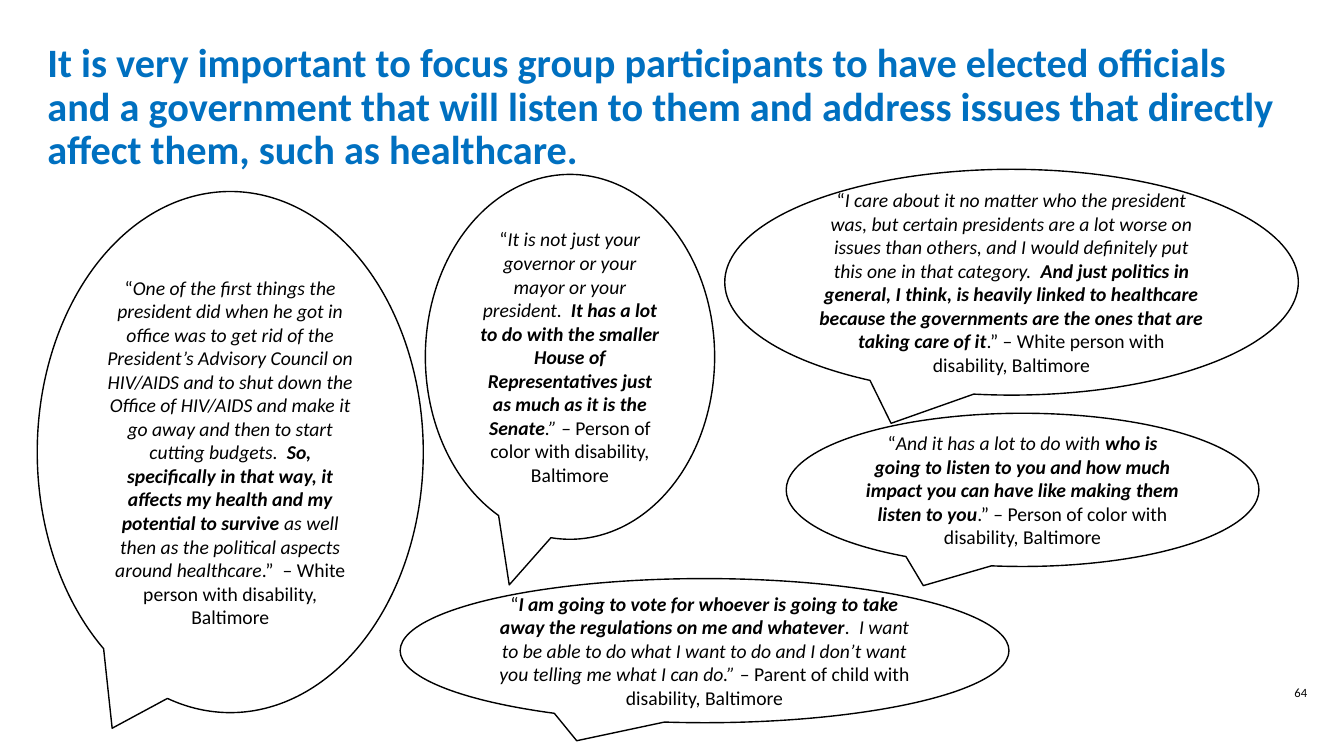
from dataclasses import dataclass
from enum import Enum

from pptx import Presentation
from pptx.dml.color import RGBColor
from pptx.enum.shapes import MSO_SHAPE
from pptx.enum.text import MSO_ANCHOR, MSO_AUTO_SIZE, PP_ALIGN
from pptx.slide import Slide
from pptx.text.text import Font
from pptx.util import Pt


@dataclass(frozen=True)
class Theme:
    font: str = "Calibri"
    title_color: RGBColor = RGBColor(0x00, 0x70, 0xC0)
    ink: RGBColor = RGBColor(0x00, 0x00, 0x00)
    title_size: float = 28.8
    quote_size: float = 14
    number_size: float = 9
    outline: float = 1


class Tone(Enum):
    """Bold and italic flags of a stretch of text."""
    PLAIN = (False, False)
    SPOKEN = (False, True)
    STRESSED = (True, True)


@dataclass(frozen=True)
class Box:
    left: float
    top: float
    width: float
    height: float

    def lengths(self) -> tuple[Pt, Pt, Pt, Pt]:
        return Pt(self.left), Pt(self.top), Pt(self.width), Pt(self.height)


@dataclass(frozen=True)
class Quote:
    box: Box
    phrases: tuple[tuple[str, Tone], ...]
    tail: tuple[float, float] = (-0.21, 0.625)


THEME = Theme()
TITLE = (
    "It is very important to focus group participants to have elected officials "
    "and a government that will listen to them and address issues that directly "
    "affect them, such as healthcare."
)
TITLE_BOX = Box(26.64, 25.2, 907.2, 104.4)
NUMBER_BOX = Box(902.16, 486, 54, 23.76)

# Each quote opens with a plain quotation mark, added when drawn
QUOTES = (
    Quote(Box(285.84, 413.28, 434.88, 102.96), (
        ("I am going to vote for whoever is going to take away the regulations "
         "on me and whatever", Tone.STRESSED),
        (".  I want to be able to do what I want to do and I don’t want you "
         "telling me what I can do.” ", Tone.SPOKEN),
        ("– Parent of child with disability, Baltimore", Tone.PLAIN),
    )),
    Quote(Box(561.6, 295.2, 337.68, 109.44), (
        ("And it has a lot to do with ", Tone.SPOKEN),
        ("who is going to listen to you and how much impact you can have like "
         "making them listen to you", Tone.STRESSED),
        (".” – Person of color with disability, Baltimore", Tone.PLAIN),
    )),
    Quote(Box(517.68, 120.96, 409.68, 161.28), (
        ("I care about it no matter who the president was, but certain "
         "presidents are a lot worse on issues than others, and I would "
         "definitely put this one in that category.  ", Tone.SPOKEN),
        ("And just politics in general, I think, is heavily linked to "
         "healthcare because the governments are the ones that are taking "
         "care of it", Tone.STRESSED),
        (".” – White person with disability, Baltimore", Tone.PLAIN),
    )),
    Quote(Box(303.84, 124.56, 206.64, 260.64), (
        ("It is not just your governor or your mayor or your president.  ",
         Tone.SPOKEN),
        ("It has a lot to do with the smaller House of Representatives just "
         "as much as it is the Senate", Tone.STRESSED),
        (".” ", Tone.SPOKEN),
        ("– Person of color with disability, Baltimore", Tone.PLAIN),
    )),
    Quote(Box(26.64, 136.8, 275.76, 372.24), (
        ("One of the first things the president did when he got in office was "
         "to get rid of the President’s Advisory Council on HIV/AIDS and to "
         "shut down the Office of HIV/AIDS and make it go away and then to "
         "start cutting budgets.  ", Tone.SPOKEN),
        ("So, specifically in that way, it affects my health and my potential "
         "to survive ", Tone.STRESSED),
        ("as well then as the political aspects around healthcare", Tone.SPOKEN),
        (".”  – White person with disability, Baltimore", Tone.PLAIN),
    ), tail=(-0.306, 0.53)),
)


def set_font(font: Font, size: float, color: RGBColor) -> None:
    font.name = THEME.font
    font.size = Pt(size)
    font.color.rgb = color


def draw_title(slide: Slide) -> None:
    title = slide.shapes.title
    title.left, title.top, title.width, title.height = TITLE_BOX.lengths()
    frame = title.text_frame
    frame.text = TITLE
    frame.word_wrap = True
    frame.auto_size = MSO_AUTO_SIZE.NONE
    frame.vertical_anchor = MSO_ANCHOR.MIDDLE
    paragraph = frame.paragraphs[0]
    paragraph.alignment = PP_ALIGN.LEFT
    paragraph.line_spacing = 0.9
    set_font(paragraph.font, THEME.title_size, THEME.title_color)
    paragraph.font.bold = True


def draw_quote(slide: Slide, quote: Quote) -> None:
    bubble = slide.shapes.add_shape(MSO_SHAPE.OVAL_CALLOUT, *quote.box.lengths())
    bubble.adjustments[0], bubble.adjustments[1] = quote.tail
    bubble.shadow.inherit = False
    bubble.fill.background()
    bubble.line.color.rgb = THEME.ink
    bubble.line.width = Pt(THEME.outline)
    frame = bubble.text_frame
    frame.word_wrap = True
    frame.vertical_anchor = MSO_ANCHOR.MIDDLE
    paragraph = frame.paragraphs[0]
    paragraph.alignment = PP_ALIGN.CENTER
    set_font(paragraph.font, THEME.quote_size, THEME.ink)
    for text, tone in (("“", Tone.PLAIN), *quote.phrases):
        run = paragraph.add_run()
        run.text = text
        run.font.bold, run.font.italic = tone.value


def draw_slide_number(slide: Slide) -> None:
    frame = slide.shapes.add_textbox(*NUMBER_BOX.lengths()).text_frame
    frame.word_wrap = True
    frame.text = "64"
    paragraph = frame.paragraphs[0]
    paragraph.alignment = PP_ALIGN.CENTER
    set_font(paragraph.font, THEME.number_size, THEME.ink)


def main() -> None:
    presentation = Presentation()
    presentation.slide_width, presentation.slide_height = Pt(960), Pt(540)
    title_only = presentation.slide_layouts[5]
    slide = presentation.slides.add_slide(title_only)

    # Heading, speech bubbles, page number
    draw_title(slide)
    for quote in QUOTES:
        draw_quote(slide, quote)
    draw_slide_number(slide)

    presentation.save("out.pptx")


if __name__ == "__main__":
    main()
